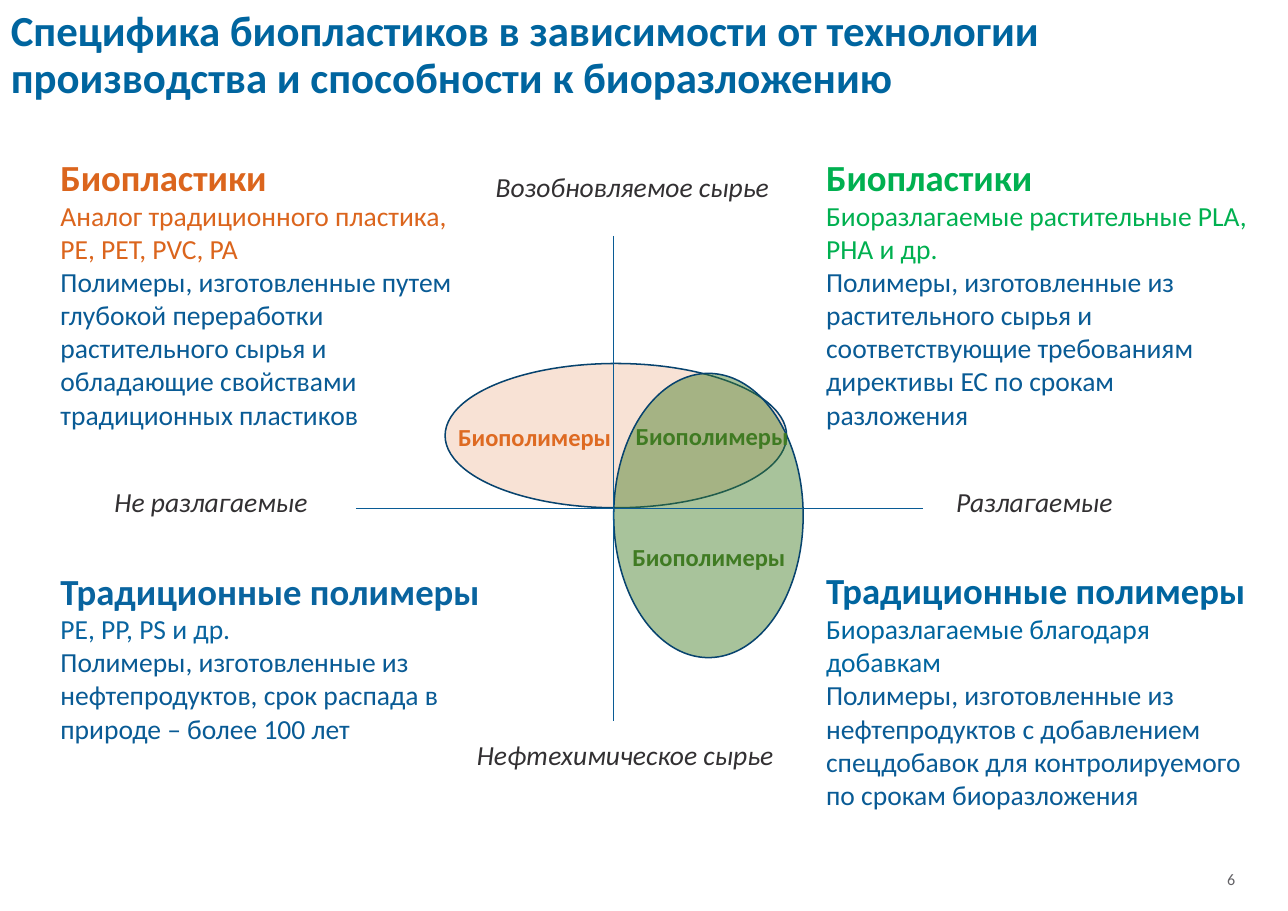
from dataclasses import dataclass
from typing import NamedTuple

from lxml.etree import SubElement
from pptx import Presentation
from pptx.dml.color import RGBColor
from pptx.enum.shapes import MSO_CONNECTOR, MSO_SHAPE
from pptx.enum.text import MSO_ANCHOR, MSO_AUTO_SIZE, PP_ALIGN
from pptx.oxml.ns import qn
from pptx.util import Inches, Pt


@dataclass(frozen=True)
class Theme:
    font: str = "Calibri"
    title: str = "00659F"
    body: str = "095B95"
    traditional: str = "09649F"
    orange: str = "DB651D"
    green: str = "00B050"
    bio_based: str = "DE6A22"
    degradable: str = "407B23"
    outline: str = "07436E"
    label: str = "323032"
    number: str = "636266"
    title_size: float = 28
    heading_size: float = 24
    text_size: float = 18
    tag_size: float = 16
    number_size: float = 10.5


class Box(NamedTuple):
    """Left, top, width and height in percent of the slide."""
    left: float
    top: float
    width: float
    height: float


class Run(NamedTuple):
    text: str
    size: float
    color: str
    bold: bool = False
    italic: bool = False


class Quadrant(NamedTuple):
    box: Box
    heading: str
    examples: str
    description: str
    color: str


class PolymerGroup(NamedTuple):
    box: Box
    color: str
    opacity: int


class Axis(NamedTuple):
    x1: float
    y1: float
    x2: float
    y2: float


class Caption(NamedTuple):
    box: Box
    text: str
    color: str


THEME = Theme()
WIDTH, HEIGHT = Inches(11.69), Inches(8.27)

# Quadrant grid and the crossing of the axes
LEFT, RIGHT, UPPER, LOWER = 3.85, 63.3, 16.44, 61.79
QUADRANT_WIDTH = 34.39
CENTER_X, CENTER_Y = 47.65, 55.86
SIDE_LABEL_TOP, SIDE_LABEL_WIDTH = 52.6, 17.71
LABEL_HEIGHT = 4.84
TAG_WIDTH, TAG_HEIGHT = 13.86, 4.47

QUADRANTS = [
    Quadrant(Box(LEFT, UPPER, QUADRANT_WIDTH, 31.8), "Биопластики",
             "Аналог традиционного пластика, PE, PET, PVC, PA",
             "Полимеры, изготовленные путем глубокой переработки растительного "
             "сырья и обладающие свойствами традиционных пластиков", THEME.orange),
    Quadrant(Box(LEFT, LOWER, QUADRANT_WIDTH, 20.8), "Традиционные полимеры",
             "PE, PP, PS и др.",
             "Полимеры, изготовленные из нефтепродуктов, срок распада в природе "
             "– более 100 лет", THEME.traditional),
    Quadrant(Box(RIGHT, UPPER, QUADRANT_WIDTH, 31.8), "Биопластики",
             "Биоразлагаемые растительные PLA, PHA и др.",
             "Полимеры, изготовленные из растительного сырья и соответствующие "
             "требованиям директивы ЕС по срокам разложения", THEME.green),
    Quadrant(Box(RIGHT, LOWER, QUADRANT_WIDTH, 28.05), "Традиционные полимеры",
             "Биоразлагаемые благодаря добавкам",
             "Полимеры, изготовленные из нефтепродуктов с добавлением спецдобавок "
             "для контролируемого по срокам биоразложения", THEME.title),
]

GROUPS = [
    PolymerGroup(Box(34.56, 39.9, 26.52, 15.84), THEME.bio_based, 19),
    PolymerGroup(Box(CENTER_X, 40.99, 14.71, 31.2), THEME.degradable, 45),
]

AXES = [Axis(CENTER_X, 25.88, CENTER_X, 79.2), Axis(27.63, CENTER_Y, 71.69, CENTER_Y)]

TAGS = [
    Caption(Box(34.73, 45.71, TAG_WIDTH, TAG_HEIGHT), "Биополимеры", THEME.bio_based),
    Caption(Box(48.5, 45.59, TAG_WIDTH, TAG_HEIGHT), "Биополимеры", THEME.degradable),
    Caption(Box(48.25, 58.89, TAG_WIDTH, TAG_HEIGHT), "Биополимеры", THEME.degradable),
]

AXIS_LABELS = [
    Caption(Box(36.18, 80.41, 25.83, LABEL_HEIGHT), "Нефтехимическое сырье", THEME.label),
    Caption(Box(37.64, 18.02, 24.04, LABEL_HEIGHT), "Возобновляемое сырье", THEME.label),
    Caption(Box(8.04, SIDE_LABEL_TOP, SIDE_LABEL_WIDTH, LABEL_HEIGHT),
            "Не разлагаемые", THEME.label),
    Caption(Box(73.4, SIDE_LABEL_TOP, SIDE_LABEL_WIDTH, LABEL_HEIGHT),
            "Разлагаемые", THEME.label),
]


def across(share: float) -> int:
    return round(WIDTH * share / 100)


def down(share: float) -> int:
    return round(HEIGHT * share / 100)


def place(box: Box) -> tuple[int, int, int, int]:
    return across(box.left), down(box.top), across(box.width), down(box.height)


def add_text(slide, box: Box, *runs: Run, anchor=MSO_ANCHOR.TOP, align=PP_ALIGN.LEFT,
             line_spacing: float = 1.0, fit=MSO_AUTO_SIZE.SHAPE_TO_FIT_TEXT) -> None:
    """Add a text box with one paragraph for each run."""
    frame = slide.shapes.add_textbox(*place(box)).text_frame
    frame.word_wrap = True
    frame.auto_size = fit
    frame.vertical_anchor = anchor
    for index, run in enumerate(runs):
        paragraph = frame.add_paragraph() if index else frame.paragraphs[0]
        paragraph.alignment = align
        paragraph.line_spacing = line_spacing
        piece = paragraph.add_run()
        piece.text = run.text
        font = piece.font
        font.name, font.size = THEME.font, Pt(run.size)
        font.bold, font.italic = run.bold, run.italic
        font.color.rgb = RGBColor.from_string(run.color)


def add_quadrant(slide, quadrant: Quadrant) -> None:
    add_text(slide, quadrant.box,
             Run(quadrant.heading, THEME.heading_size, quadrant.color, bold=True),
             Run(quadrant.examples, THEME.text_size, quadrant.color),
             Run(quadrant.description, THEME.text_size, THEME.body))


def add_group(slide, group: PolymerGroup) -> None:
    ellipse = slide.shapes.add_shape(MSO_SHAPE.OVAL, *place(group.box))
    ellipse.shadow.inherit = False
    ellipse.fill.solid()
    ellipse.fill.fore_color.rgb = RGBColor.from_string(group.color)
    color = ellipse.fill._xPr.find(qn("a:solidFill"))[0]
    SubElement(color, qn("a:alpha"), val=str(group.opacity * 1000))
    ellipse.line.color.rgb = RGBColor.from_string(THEME.outline)
    ellipse.line.width = Pt(1)


def add_axis(slide, axis: Axis) -> None:
    line = slide.shapes.add_connector(MSO_CONNECTOR.STRAIGHT, across(axis.x1), down(axis.y1),
                                      across(axis.x2), down(axis.y2))
    line.line.color.rgb = RGBColor.from_string(THEME.body)
    line.line.width = Pt(0.5)
    SubElement(line._element.spPr, qn("a:effectLst"))


def main() -> None:
    deck = Presentation()
    deck.slide_width, deck.slide_height = WIDTH, HEIGHT
    slide = deck.slides.add_slide(deck.slide_layouts[6])

    # Title
    add_text(slide, Box(0, 0, 81.95, 12.33),
             Run("Специфика биопластиков в зависимости от технологии производства "
                 "и способности к биоразложению", THEME.title_size, THEME.title, bold=True),
             anchor=MSO_ANCHOR.MIDDLE, line_spacing=0.9, fit=MSO_AUTO_SIZE.NONE)

    # Descriptions of the four quadrants
    for quadrant in QUADRANTS:
        add_quadrant(slide, quadrant)

    # Overlapping polymer groups and the axes
    for group in GROUPS:
        add_group(slide, group)
    for axis in AXES:
        add_axis(slide, axis)

    # Group tags and axis labels
    for tag in TAGS:
        add_text(slide, tag.box, Run(tag.text, THEME.tag_size, tag.color, bold=True))
    for label in AXIS_LABELS:
        add_text(slide, label.box, Run(label.text, THEME.text_size, label.color, italic=True))

    # Slide number
    add_text(slide, Box(74.25, 93.83, 22.5, 5.32),
             Run("6", THEME.number_size, THEME.number),
             anchor=MSO_ANCHOR.MIDDLE, align=PP_ALIGN.RIGHT, fit=MSO_AUTO_SIZE.NONE)

    deck.save("out.pptx")


if __name__ == "__main__":
    main()
